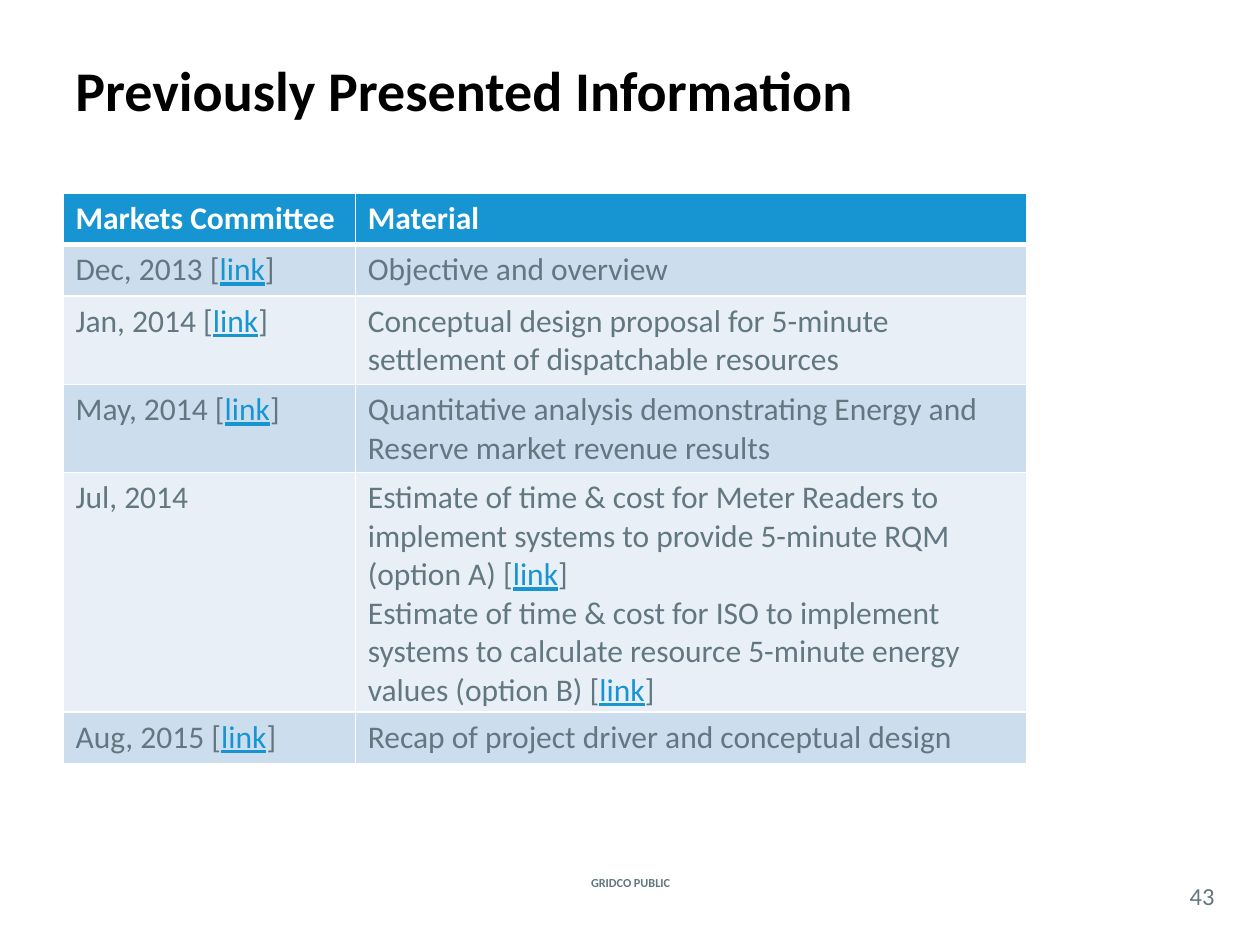
from lxml import etree
from pptx import Presentation
from pptx.dml.color import RGBColor
from pptx.enum.text import MSO_ANCHOR, PP_ALIGN
from pptx.oxml.ns import qn
from pptx.util import Inches, Pt

LEFT, CENTER = PP_ALIGN.LEFT, PP_ALIGN.CENTER
MIDDLE = MSO_ANCHOR.MIDDLE

BLACK = RGBColor(0x00, 0x00, 0x00)
WHITE = RGBColor(0xFF, 0xFF, 0xFF)
SLATE = RGBColor(0x62, 0x77, 0x7F)
BLUE = RGBColor(0x17, 0x95, 0xD2)
BAND_DARK = RGBColor(0xCC, 0xDD, 0xEE)
BAND_LIGHT = RGBColor(0xE8, 0xEF, 0xF7)
FONT = "Calibri"
LINK = "link"

COLUMN_WIDTHS = (2.32, 5.33)
ROW_HEIGHT = 0.41
HEADER = ("Markets Committee", "Material")
# Each cell is a list of paragraphs, each paragraph a list of runs
MEETINGS = [
    ([["Dec, 2013 [", LINK, "]"]], [["Objective and overview"]]),
    ([["Jan, 2014 [", LINK, "]"]],
     [["Conceptual design proposal for 5-minute settlement of dispatchable resources"]]),
    ([["May, 2014 [", LINK, "]"]],
     [["Quantitative analysis demonstrating Energy and Reserve market revenue results"]]),
    ([["Jul, 2014"]],
     [["Estimate of time & cost for Meter Readers to implement systems to provide "
       "5-minute RQM (option A) [", LINK, "]"],
      ["Estimate of time & cost for ISO to implement systems to calculate resource "
       "5-minute energy values (option B) [", LINK, "]"]]),
    ([["Aug, 2015 [", LINK, "]"]], [["Recap of project driver and conceptual design"]]),
]


def add_span(para, text, size, color, bold=False, underline=False):
    span = para.add_run()
    span.text = text
    font = span.font
    font.name, font.size, font.bold = FONT, Pt(size), bold
    font.color.rgb = color
    if underline:
        font.underline = True


def add_label(page, bounds, text, size, color, bold=False, align=LEFT, inset=None):
    box = page.shapes.add_textbox(*(Inches(length) for length in bounds))
    frame = box.text_frame
    frame.word_wrap = True
    frame.vertical_anchor = MIDDLE
    if inset is not None:
        frame.margin_left = frame.margin_right = Inches(inset)
        frame.margin_top = frame.margin_bottom = Inches(inset)
    para = frame.paragraphs[0]
    para.alignment = align
    add_span(para, text, size, color, bold)


def set_borders(cell, top, bottom):
    """Draw white cell edges; top and bottom widths are in points."""
    properties = cell._tc.get_or_add_tcPr()
    for edge, width in (("lnL", 1), ("lnR", 1), ("lnT", top), ("lnB", bottom)):
        line = etree.SubElement(properties, qn(f"a:{edge}"), w=str(Pt(width)))
        fill = etree.SubElement(line, qn("a:solidFill"))
        etree.SubElement(fill, qn("a:srgbClr"), val=str(WHITE))


def fill_cell(cell, paragraphs, fill, color, bold=False):
    cell.fill.solid()
    cell.fill.fore_color.rgb = fill
    frame = cell.text_frame
    for index, spans in enumerate(paragraphs):
        para = frame.add_paragraph() if index else frame.paragraphs[0]
        for text in spans:
            is_link = text == LINK
            add_span(para, text, 18, BLUE if is_link else color, bold, is_link)


def add_meeting_table(page, left, top):
    row_count = len(MEETINGS) + 1
    table = page.shapes.add_table(
        row_count, len(COLUMN_WIDTHS), Inches(left), Inches(top),
        Inches(sum(COLUMN_WIDTHS)), Inches(ROW_HEIGHT * row_count)).table
    for column, width in zip(table.columns, COLUMN_WIDTHS):
        column.width = Inches(width)

    # Header row, with a thick rule below it
    for index, heading in enumerate(HEADER):
        cell = table.cell(0, index)
        set_borders(cell, 1, 3)
        fill_cell(cell, [[heading]], BLUE, WHITE, bold=True)

    # Banded body rows
    for row, meeting in enumerate(MEETINGS, start=1):
        band = BAND_DARK if row % 2 else BAND_LIGHT
        for index, paragraphs in enumerate(meeting):
            cell = table.cell(row, index)
            set_borders(cell, 3 if row == 1 else 1, 1)
            fill_cell(cell, paragraphs, band, SLATE)


def add_footer(page):
    add_label(page, (4.27, 6.92, 1.47, 0.17), "GRIDCO PUBLIC", 7, SLATE,
              bold=True, align=CENTER)
    add_label(page, (9.33, 6.96, 0.42, 0.29), "43", 14, SLATE,
              align=CENTER, inset=0)


def main():
    deck = Presentation()
    deck.slide_width, deck.slide_height = Inches(10), Inches(7.5)
    page = deck.slides.add_slide(deck.slide_layouts[6])
    add_footer(page)
    add_label(page, (0.5, 0.08, 9, 1.25), "Previously Presented Information",
              32, BLACK, bold=True)
    add_meeting_table(page, 0.5, 1.53)
    deck.save("out.pptx")


if __name__ == "__main__":
    main()
